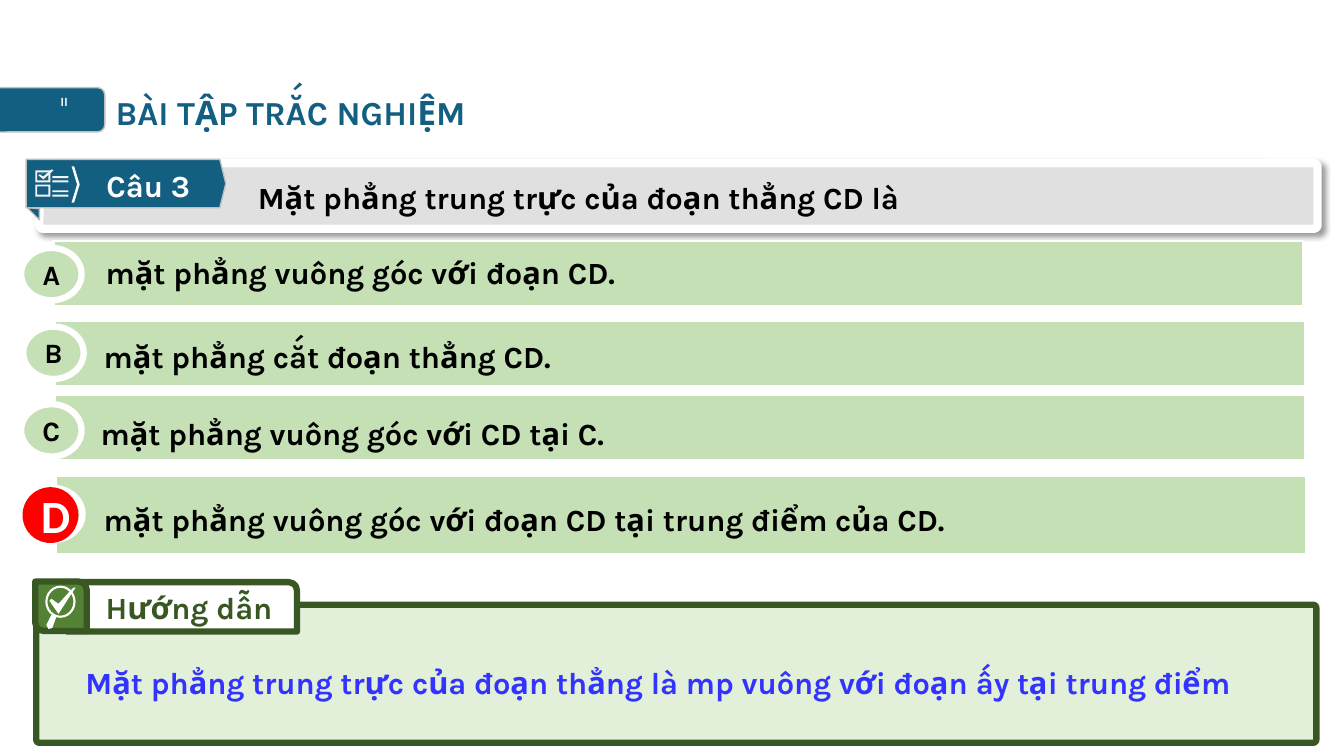
from pptx import Presentation
from pptx import util as u
from pptx.dml.color import RGBColor
from pptx.enum import shapes, text
from pptx.oxml import parse_xml
from pptx.oxml.ns import nsdecls

Pt = u.Pt
Kind = shapes.MSO_SHAPE
Align = text.PP_ALIGN

# Content: all lengths in points
TITLE = ("II", "BÀI TẬP TRẮC NGHIỆM")
QUERY = ("Câu 3", "Mặt phẳng trung trực của đoạn thẳng CD là")
# letter, bar box, disc corner, text box, wrap, text, indented
ANSWERS = [
    ("B", (39.6, 229, 892.8, 46.8), (16.6, 233.3), (67, 237.6, 353.5, 33.8),
     False, "mặt phẳng cắt đoạn thẳng CD.", False),
    ("A", (38.2, 172.1, 892.8, 46.8), (15.1, 177.1), (68.4, 177.8, 403.2, 33.8),
     False, "mặt phẳng vuông góc với đoạn CD.", False),
    ("C", (39.6, 282.2, 892.8, 46.8), (15.1, 288.7), (57.6, 288.7, 405.4, 36),
     False, "mặt phẳng vuông góc với CD tại C.", True),
    ("", (40.3, 339.8, 892.8, 56.2), (15.8, 348.5), (59.8, 349.9, 763.9, 36),
     True, "mặt phẳng vuông góc với đoạn CD tại trung điểm của CD.", True),
]
RIGHT = "D"
GUIDE = ("Hướng dẫn",
         "Mặt phẳng trung trực của đoạn thẳng là mp vuông với đoạn ấy tại trung điểm")

FOLD = [(19.4, 148.3), (28.1, 157), (28.1, 149)]
TICK = [(31, 123.5), (27.4, 125.3), (28.1, 124.6), (31, 126),
        (36.7, 121), (38.2, 121.7), (31, 128.2), (27.4, 125.3)]
CHECK = [(35.3, 429.1), (36.7, 427.7), (41.8, 431.3), (49.7, 422.6),
         (52.6, 419.8), (54, 419.8), (51.1, 424.1), (41.8, 438.5)]
GRIP = [(36.7, 439.2), (33.1, 446.4), (34.6, 449.3), (37.4, 448.6), (40.3, 440.6)]

THEME = {
    "font": "Karla", "alt": "Calibri",
    "tiny": 9, "letter": 20, "body": 22, "title": 24, "mark": 33,
    "blue": "135F82", "edge": "BFBFBF", "grey": "E0E0E0", "icon": "F2F2F2",
    "white": "FFFFFF", "black": "000000", "bar": "C5E0B4", "pale": "E2F0D9",
    "dark": "385723", "green": "548235", "red": "FF0000", "note": "3333FF",
}

deck = Presentation()
deck.slide_width, deck.slide_height = Pt(960), Pt(540)
slide = deck.slides.add_slide(deck.slide_layouts[6])
parts = slide.shapes


def tint(name):
    return RGBColor.from_string(THEME[name])


def paint(item, fill, line=None, width=1):
    item.shadow.inherit = False
    item.fill.solid()
    item.fill.fore_color.rgb = tint(fill)
    if line:
        item.line.color.rgb = tint(line)
        item.line.width = Pt(width)
    else:
        item.line.fill.background()
    return item


def shape(kind, box, fill, line=None, width=1, adj=()):
    item = parts.add_shape(kind, *map(Pt, box))
    for i, val in enumerate(adj):
        item.adjustments[i] = val
    return paint(item, fill, line, width)


def outline(dots, fill, line=None):
    dots = [(Pt(x), Pt(y)) for x, y in dots]
    pen = parts.build_freeform(*dots[0])
    pen.add_line_segments(dots[1:], close=True)
    return paint(pen.convert_to_shape(), fill, line)


def write(item, words, size, color, font="font", align=None):
    par = item.text_frame.paragraphs[0]
    par.text = words
    par.alignment = align
    par.font.name = THEME[font]
    par.font.size = Pt(THEME[size])
    par.font.bold = True
    par.font.color.rgb = tint(color)
    return par


def label(box, words, size, color, wrap=True, align=None):
    item = parts.add_textbox(*map(Pt, box))
    item.text_frame.word_wrap = wrap
    item.text_frame.auto_size = text.MSO_AUTO_SIZE.SHAPE_TO_FIT_TEXT
    return write(item, words, size, color, align=align)


def disc(box, words, fill, line, width, size, color, font="font"):
    item = shape(Kind.OVAL, box, fill, line, width)
    if words:
        item.text_frame.vertical_anchor = text.MSO_ANCHOR.MIDDLE
        write(item, words, size, color, font, Align.CENTER)


# Section title
shape(Kind.ROUNDED_RECTANGLE, (-18, 62.6, 92.9, 31.7), "blue", "edge")
label((36, 63.4, 23, 18), TITLE[0], "tiny", "white", wrap=False)
label((75.6, 61.9, 347.8, 36), TITLE[1], "title", "blue").space_before = Pt(3)

# Question panel with its soft shadow
panel = shape(Kind.ROUNDED_RECTANGLE, (28.1, 116.6, 913, 46.8),
              "grey", "white", 6, [0.055])
effects = panel._element.spPr.find(
    "{http://schemas.openxmlformats.org/drawingml/2006/main}effectLst")
effects.append(parse_xml(
    f'<a:outerShdw {nsdecls("a")} blurRad="{Pt(4)}" dist="{Pt(3)}" dir="2700000" '
    'algn="tl" rotWithShape="0"><a:srgbClr val="000000"><a:alpha val="40000"/>'
    '</a:srgbClr></a:outerShdw>'))

# Question tag and checklist icon
outline(FOLD, "blue", "edge")
shape(Kind.PENTAGON, (18.7, 113.8, 142.6, 34.6), "blue", "edge", adj=[0.124])
for top in (121.7, 131.8):
    shape(Kind.FRAME, (25.2, top, 10.8, 8.6), "icon", adj=[0.16])
    for drop in (4.1, 7.2):
        shape(Kind.RECTANGLE, (37.4, top + drop, 11.5, 1.4), "icon")
outline(TICK, "icon")
shape(Kind.CHEVRON, (51.1, 118.8, 5.8, 25.9), "white", adj=[0.681])
label((67, 115.9, 77.8, 33.8), QUERY[0], "body", "white", False, Align.CENTER)

# Guide panel, tab and magnifier
shape(Kind.ROUNDED_RECTANGLE, (25.9, 432, 914.4, 98.6), "pale", "dark", 4.5, [0.022])
shape(Kind.ROUND_1_RECTANGLE, (47.9, 415.8, 164.2, 35.3), "white", "dark", 4.5)
label((68.4, 416.9, 137.5, 33.8), GUIDE[0], "body", "dark", wrap=False)
shape(Kind.ROUND_2_DIAG_RECTANGLE, (25.2, 415.4, 36.7, 35.3),
      "green", "dark", 4.5, [0, 0.167])
shape(Kind.DONUT, (32.4, 418.3, 21.6, 23), "white", adj=[0.07])
outline(CHECK, "white")
outline(GRIP, "white")

# Answer bars and letters
for letter, bar, spot, *_ in ANSWERS:
    shape(Kind.RECTANGLE, bar, "bar", "white", 1.5)
    disc((*spot, 43.2, 37.4), letter, "bar", "white", 4.5, "letter", "black")
disc((16.6, 348.5, 38.9, 38.9), RIGHT, "red", "red", 1, "mark", "white", "alt")

# Question, answer and guide wording
label((177.1, 123.8, 558, 33.8), QUERY[1], "body", "black")
for _, _, _, box, wrap, words, inset in ANSWERS:
    par = label(box, words, "body", "black", wrap)
    if inset:
        par.alignment = Align.JUSTIFY
        par.line_spacing = 1.15
        par._p.get_or_add_pPr().set("marL", str(Pt(7.2)))
label((54, 470.9, 885.6, 33.8), GUIDE[1], "body", "note")

deck.save("out.pptx")
